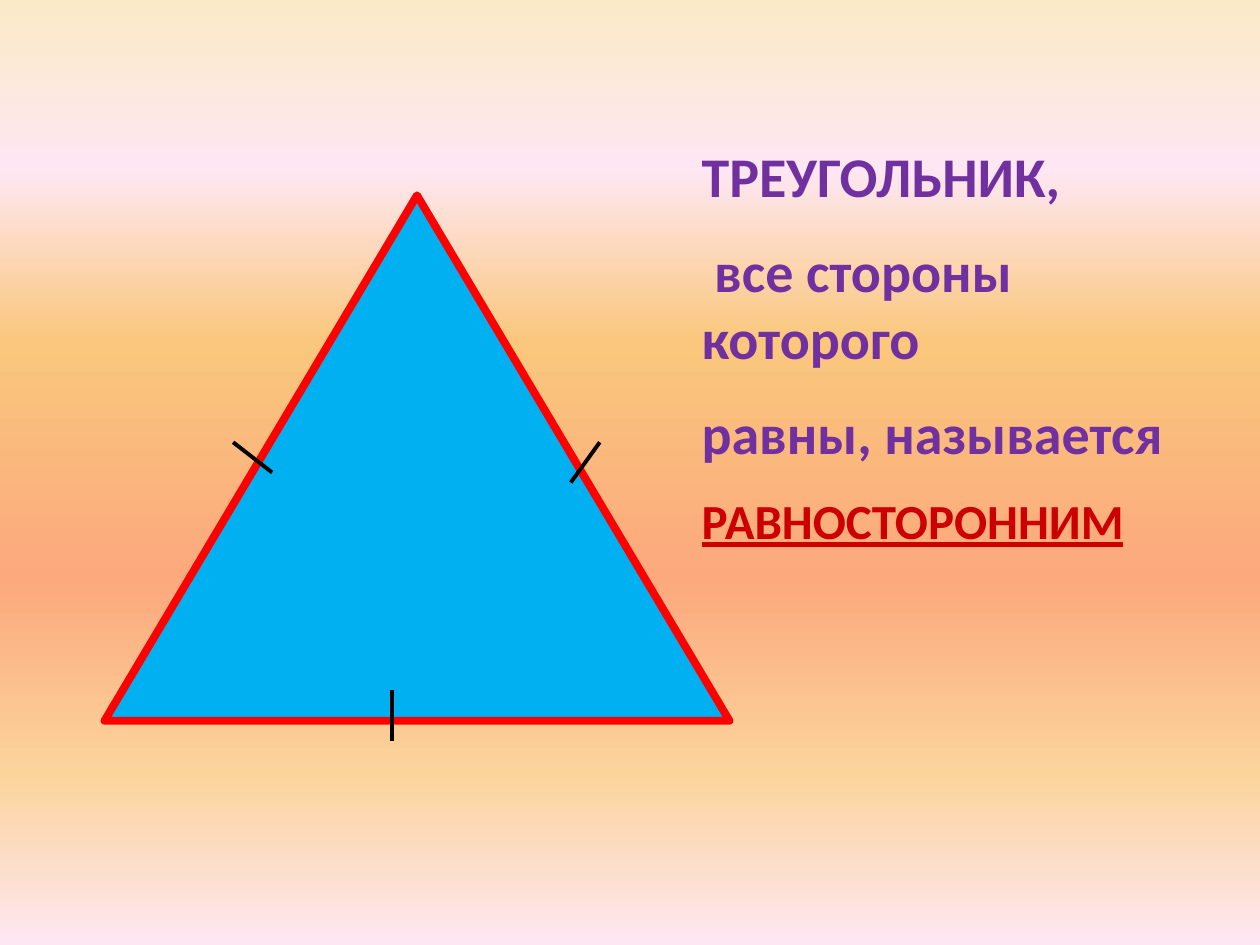
from lxml import etree
from pptx import Presentation
from pptx import util as u
from pptx.dml.color import RGBColor
from pptx.enum import shapes, text
from pptx.oxml.ns import qn

COLORS = {
    "triangle": "00B0F0", "side": "FF0000", "tick": "000000",
    "definition": "7030A0", "term": "CC0000",
}
BACKGROUND = [(0, "FBEAC7"), (18, "FEE7F2"), (36, "FAC77D"),
              (61, "FBA97D"), (82, "FBD49C"), (100, "FEE7F2")]


def rgb(name):
    return RGBColor.from_string(COLORS[name])


class Deck:
    """Style and current slide; lengths are percentages of the slide's size."""
    font = "Calibri"

    def __init__(self, width, height):
        self.prs = Presentation()
        self.prs.slide_width = u.Inches(width)
        self.prs.slide_height = u.Inches(height)
        self.slide = self.prs.slides.add_slide(self.prs.slide_layouts[6])

    def place(self, *lengths):
        sizes = (self.prs.slide_width, self.prs.slide_height) * 2
        return [round(size * share / 100) for size, share in zip(sizes, lengths)]

    def background(self, stops):
        self.slide.background.fill.gradient()
        gradient = next(self.slide.element.iter(qn("a:gradFill")))
        stop_list = gradient.find(qn("a:gsLst"))
        for default in list(stop_list):
            stop_list.remove(default)
        for percent, color in stops:
            stop = etree.SubElement(stop_list, qn("a:gs"), pos=str(percent * 1000))
            etree.SubElement(stop, qn("a:srgbClr"), val=color)
        gradient.find(qn("a:lin")).set("ang", str(90 * 60000))

    def triangle(self, *box):
        triangle = self.slide.shapes.add_shape(
            shapes.MSO_SHAPE.ISOSCELES_TRIANGLE, *self.place(*box))
        triangle.shadow.inherit = False
        triangle.fill.solid()
        triangle.fill.fore_color.rgb = rgb("triangle")
        triangle.line.color.rgb = rgb("side")
        triangle.line.width = u.Pt(4.5)

    def tick(self, *ends):
        tick = self.slide.shapes.add_connector(
            shapes.MSO_CONNECTOR.STRAIGHT, *self.place(*ends))
        tick.line.color.rgb = rgb("tick")
        tick.line.width = u.Pt(2.25)
        etree.SubElement(tick.element.spPr, qn("a:effectLst"))

    def text(self, box, paragraphs):
        frame = self.slide.shapes.add_textbox(*self.place(*box)).text_frame
        frame.word_wrap = True
        frame.auto_size = text.MSO_AUTO_SIZE.SHAPE_TO_FIT_TEXT
        for index, (words, size, color, align, underline) in enumerate(paragraphs):
            paragraph = frame.add_paragraph() if index else frame.paragraphs[0]
            paragraph.alignment = align
            paragraph.space_before = u.Pt(size / 2 if index else 0)
            run = paragraph.add_run()
            run.text = words
            run.font.name = self.font
            run.font.size = u.Pt(size)
            run.font.bold = True
            run.font.underline = underline
            run.font.color.rgb = rgb(color)


def main():
    deck = Deck(10, 7.5)
    deck.background(BACKGROUND)

    # Equilateral triangle
    deck.triangle(8.3, 20.67, 49.6, 55.6)

    # Definition
    left, justify = text.PP_ALIGN.LEFT, text.PP_ALIGN.JUSTIFY
    deck.text((54.7, 14.27, 43.3, 46.67), [
        ("ТРЕУГОЛЬНИК,", 32, "definition", justify, None),
        (" все стороны которого", 32, "definition", left, None),
        ("равны, называется ", 32, "definition", justify, None),
        ("РАВНОСТОРОННИМ", 28, "term", justify, True),
    ])

    # Ticks marking equal sides: left, right, base
    for ends in [(18.5, 46.8, 21.6, 50), (47.6, 46.8, 45.3, 51.07),
                 (31.1, 73.07, 31.1, 78.4)]:
        deck.tick(*ends)

    deck.prs.save("out.pptx")


if __name__ == "__main__":
    main()
